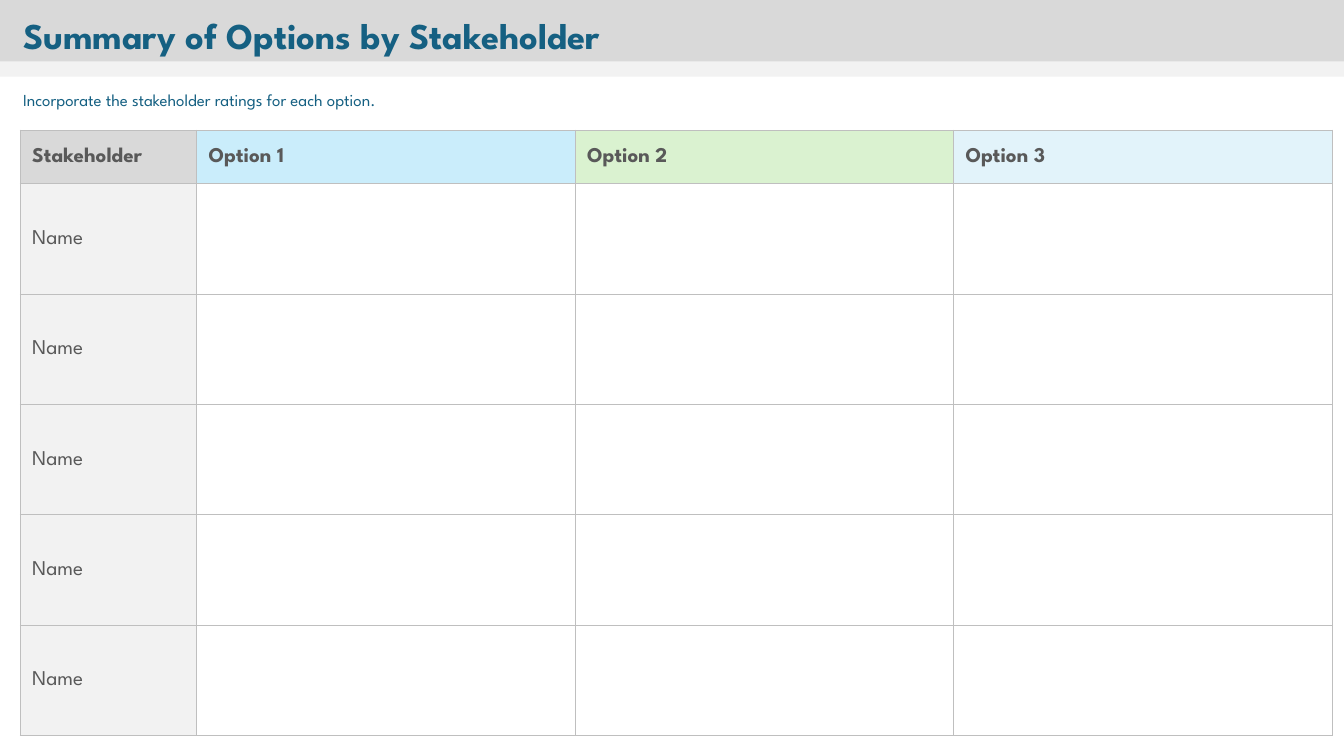
from lxml import etree
from pptx import Presentation
from pptx import util as u
from pptx.dml.color import RGBColor
from pptx.enum import shapes, text
from pptx.oxml import ns

FONT = "League Spartan"
TEAL, GREY, BORDER = "156082", "595959", "BFBFBF"
DARK_BAND, LIGHT_BAND = "D9D9D9", "F2F2F2"
HEADERS = [("Stakeholder", DARK_BAND), ("Option 1", "CAEDFB"),
           ("Option 2", "DAF2D0"), ("Option 3", "E2F3FA")]
STAKEHOLDERS = ["Name"] * 5


def colour(value):
    """Turn a hex string into a colour."""
    return RGBColor.from_string(value)


def place(shape, left, top, width, height):
    """Move a shape to a box given in inches."""
    shape.left, shape.top = u.Inches(left), u.Inches(top)
    shape.width, shape.height = u.Inches(width), u.Inches(height)


def write(frame, words, size, fill, bold=False):
    """Write one left-aligned run into a text frame."""
    paragraph = frame.paragraphs[0]
    paragraph.alignment = text.PP_ALIGN.LEFT
    run = paragraph.add_run()
    run.text = words
    run.font.name = FONT
    run.font.size = u.Pt(size)
    run.font.bold = bold
    run.font.color.rgb = colour(fill)


def write_line(shape, words, size, bold=False):
    """Format a text shape as a single heading line."""
    frame = shape.text_frame
    frame.word_wrap = True
    frame.auto_size = text.MSO_AUTO_SIZE.SHAPE_TO_FIT_TEXT
    frame.vertical_anchor = text.MSO_ANCHOR.TOP
    write(frame, words, size, TEAL, bold)


def add_band(slide, left, top, width, height, fill):
    """Add a plain filled rectangle."""
    band = slide.shapes.add_shape(
        shapes.MSO_SHAPE.RECTANGLE,
        *map(u.Inches, (left, top, width, height)))
    band.shadow.inherit = False
    band.fill.solid()
    band.fill.fore_color.rgb = colour(fill)
    band.line.fill.background()


def add_header(slide, left, top, width):
    """Add the two bands, the title and the instruction."""
    add_band(slide, left, top, width, 0.62, DARK_BAND)
    add_band(slide, left, top + 0.61, width, 0.15, LIGHT_BAND)
    title = slide.shapes.title
    place(title, left + 0.13, top + 0.08, 10.76, 0.54)
    write_line(title, "Summary of Options by Stakeholder", 26, True)
    title.element.getparent().append(title.element)
    instruction = slide.shapes.add_textbox(0, 0, 0, 0)
    place(instruction, left + 0.13, top + 0.84, width - 0.25, 0.3)
    write_line(instruction,
               "Incorporate the stakeholder ratings for each option.", 12)


def format_cell(cell, fill=None):
    """Set the borders, insets and fill of a table cell."""
    cell.vertical_anchor = text.MSO_ANCHOR.MIDDLE
    cell.margin_left, cell.margin_right = u.Inches(0.12), u.Inches(0.01)
    cell.margin_top, cell.margin_bottom = u.Inches(0.01), 0
    properties = cell._tc.get_or_add_tcPr()
    for side in ("a:lnL", "a:lnR", "a:lnT", "a:lnB"):
        line = etree.SubElement(properties, ns.qn(side), w=str(u.Pt(0.5)))
        solid = etree.SubElement(line, ns.qn("a:solidFill"))
        etree.SubElement(solid, ns.qn("a:srgbClr"), val=BORDER)
    if fill:
        cell.fill.solid()
        cell.fill.fore_color.rgb = colour(fill)
    else:
        cell.fill.background()


def add_ratings_table(slide, left, top, width, height):
    """Add the grid of stakeholders against options."""
    name_width, header_height = 1.75, 0.53
    option_width = (width - name_width) / (len(HEADERS) - 1)
    row_height = (height - header_height) / len(STAKEHOLDERS)
    table = slide.shapes.add_table(
        len(STAKEHOLDERS) + 1, len(HEADERS),
        *map(u.Inches, (left, top, width, height))).table
    table.horz_banding = False
    for index, column in enumerate(table.columns):
        column.width = u.Inches(option_width if index else name_width)
    for index, row in enumerate(table.rows):
        row.height = u.Inches(row_height if index else header_height)
    for index, (words, fill) in enumerate(HEADERS):
        cell = table.cell(0, index)
        format_cell(cell, fill)
        write(cell.text_frame, words, 15, GREY, True)
    for index, name in enumerate(STAKEHOLDERS, 1):
        name_cell, *rating_cells = table.rows[index].cells
        format_cell(name_cell, LIGHT_BAND)
        write(name_cell.text_frame, name, 15, GREY)
        for cell in rating_cells:
            format_cell(cell)


def main():
    """Build and save the presentation."""
    presentation = Presentation()
    presentation.slide_width = u.Inches(13.33)
    presentation.slide_height = u.Inches(7.5)
    slide = presentation.slides.add_slide(presentation.slide_layouts[5])
    add_header(slide, 0, 0, 13.33)
    add_ratings_table(slide, 0.2, 1.29, 13.01, 6.01)
    presentation.save("out.pptx")


if __name__ == "__main__":
    main()
